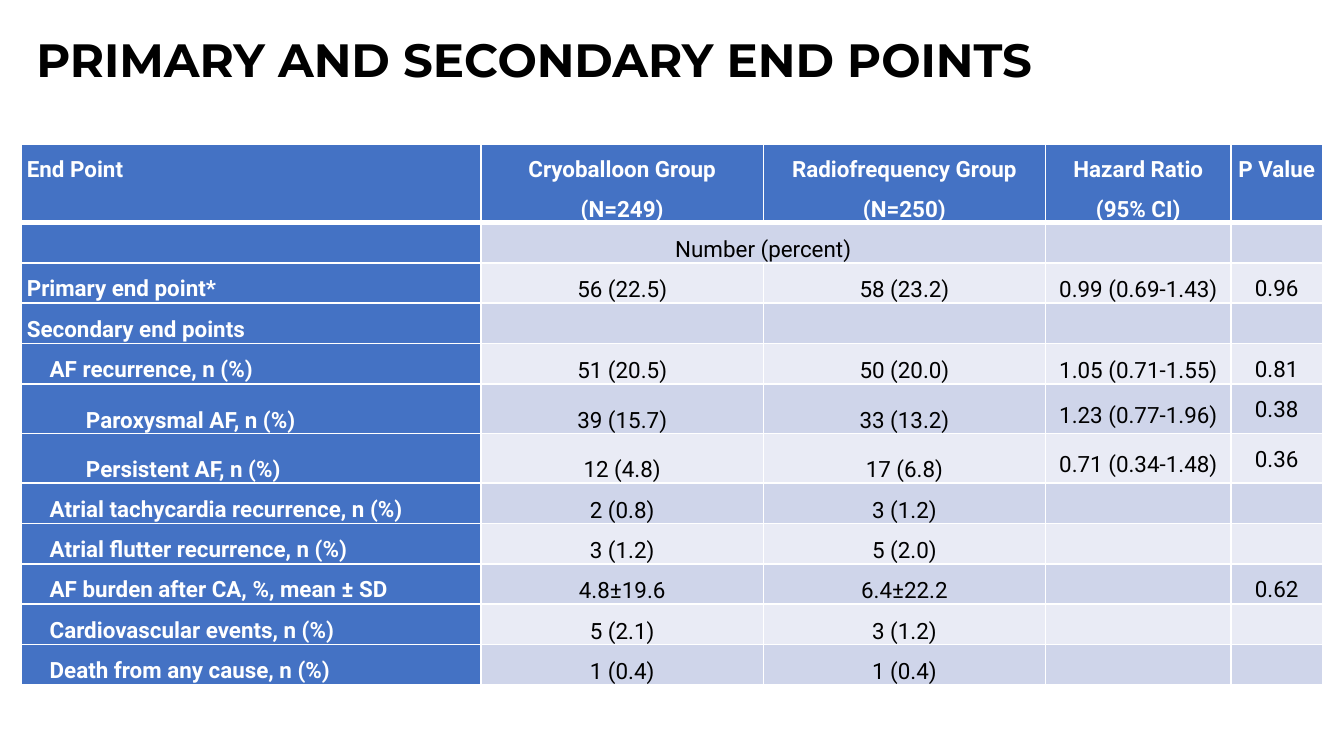
import pptx
import pptx.util
import pptx.dml.color
import pptx.enum.text
import pptx.oxml.ns
import lxml.etree

Inches, Pt = pptx.util.Inches, pptx.util.Pt
Anchor, Align = pptx.enum.text.MSO_ANCHOR, pptx.enum.text.PP_ALIGN
qn = pptx.oxml.ns.qn

COLORS = {"header": "4472C4", "dark_band": "CFD5EA", "light_band": "E9EBF5",
          "white": "FFFFFF", "black": "000000"}
TITLE = "PRIMARY AND SECONDARY END POINTS"
HEADERS = ["End Point", "Cryoballoon Group\n(N=249)", "Radiofrequency Group\n(N=250)",
           "Hazard Ratio (95% CI)", "P Value"]
# Indent level, then the text of the five columns
END_POINTS = [
    (0, "", "Number (percent)", "", "", ""),
    (0, "Primary end point*", "56 (22.5)", "58 (23.2)", "0.99 (0.69-1.43)", "0.96"),
    (0, "Secondary end points", "", "", "", ""),
    (1, "AF recurrence, n (%)", "51 (20.5)", "50 (20.0)", "1.05 (0.71-1.55)", "0.81"),
    (2, "Paroxysmal AF, n (%)", "39 (15.7)", "33 (13.2)", "1.23 (0.77-1.96)", "0.38"),
    (2, "Persistent AF, n (%)", "12 (4.8)", "17 (6.8)", "0.71 (0.34-1.48)", "0.36"),
    (1, "Atrial tachycardia recurrence, n (%)", "2 (0.8)", "3 (1.2)", "", ""),
    (1, "Atrial flutter recurrence, n (%)", "3 (1.2)", "5 (2.0)", "", ""),
    (1, "AF burden after CA, %, mean ± SD", "4.8±19.6", "6.4±22.2", "", "0.62"),
    (1, "Cardiovascular events, n (%)", "5 (2.1)", "3 (1.2)", "", ""),
    (1, "Death from any cause, n (%)", "1 (0.4)", "1 (0.4)", "", ""),
]
COLUMN_WIDTHS = [3.42, 2.1, 2.1, 1.38, 0.68]
COLUMN_ANCHORS = [Anchor.TOP, Anchor.BOTTOM, Anchor.BOTTOM, Anchor.MIDDLE, Anchor.TOP]
HEADER_HEIGHT = 0.58
ROW_HEIGHTS = [0.3, 0.3, 0.37]  # by indent level
INDENTS = [0, 0.17, 0.44]


def rgb(name):
    return pptx.dml.color.RGBColor.from_string(COLORS[name])


def add_run(paragraph, text, font_name, size, color, bold):
    run = paragraph.add_run()
    run.text = text
    run.font.name = font_name
    run.font.size = Pt(size)
    run.font.bold = bold
    run.font.color.rgb = rgb(color)


def set_borders(cell, top, bottom):
    properties = cell._tc.get_or_add_tcPr()
    sides = [("lnL", 1), ("lnR", 1), ("lnT", top), ("lnB", bottom)]
    for position, (side, width) in enumerate(sides):
        line = lxml.etree.Element(qn("a:" + side), w=str(Pt(width)))
        fill = lxml.etree.SubElement(line, qn("a:solidFill"))
        lxml.etree.SubElement(fill, qn("a:srgbClr"), val=COLORS["white"])
        properties.insert(position, line)


def write_cell(cell, text, row, column, level):
    is_header = row == 0 or column == 0
    band = "dark_band" if row % 2 else "light_band"
    cell.fill.solid()
    cell.fill.fore_color.rgb = rgb("header" if is_header else band)
    set_borders(cell, 3 if row == 1 else 1, 3 if row == 0 else 1)
    cell.margin_left = cell.margin_right = Inches(0.04)
    cell.margin_top = cell.margin_bottom = 0
    cell.vertical_anchor = Anchor.TOP if row == 0 else COLUMN_ANCHORS[column]
    if level == 2 and column == 0:
        cell.vertical_anchor = Anchor.BOTTOM
    for number, content in enumerate(text.split("\n")):
        frame = cell.text_frame
        paragraph = frame.add_paragraph() if number else frame.paragraphs[0]
        if not content:  # keep an empty cell from growing its row
            lxml.etree.SubElement(paragraph._p, qn("a:endParaRPr"), sz="1200")
            continue
        paragraph.line_spacing = 1.5
        paragraph.alignment = Align.CENTER if column else Align.LEFT
        if column == 0 and level:
            paragraph._p.get_or_add_pPr().set("indent", str(Inches(INDENTS[level])))
        add_run(paragraph, content, "Roboto", 12, "white" if is_header else "black", is_header)


# Widescreen slide, 16:9
presentation = pptx.Presentation()
presentation.slide_width = Inches(10)
presentation.slide_height = Inches(10 * 9 / 16)
slide = presentation.slides.add_slide(presentation.slide_layouts[5])

# Title
title = slide.shapes.title
title.left, title.top, title.width, title.height = map(Inches, (0.17, 0.18, 9.04, 0.59))
title.text_frame.vertical_anchor = Anchor.TOP
title.text_frame.word_wrap = True
title_paragraph = title.text_frame.paragraphs[0]
title_paragraph.alignment = Align.LEFT
add_run(title_paragraph, TITLE, "Montserrat", 25, "black", True)

# End point table
rows = [(0, *HEADERS)] + END_POINTS
heights = [HEADER_HEIGHT] + [ROW_HEIGHTS[level] for level, *_ in END_POINTS]
table = slide.shapes.add_table(
    len(rows), len(HEADERS), Inches(0.16), Inches(1.07),
    Inches(sum(COLUMN_WIDTHS)), Inches(sum(heights))).table
for column, width in enumerate(COLUMN_WIDTHS):
    table.columns[column].width = Inches(width)
for row, (level, *texts) in enumerate(rows):
    table.rows[row].height = Inches(heights[row])
    for column, text in enumerate(texts):
        write_cell(table.cell(row, column), text, row, column, level)
table.cell(1, 1).merge(table.cell(1, 2))

presentation.save("out.pptx")
